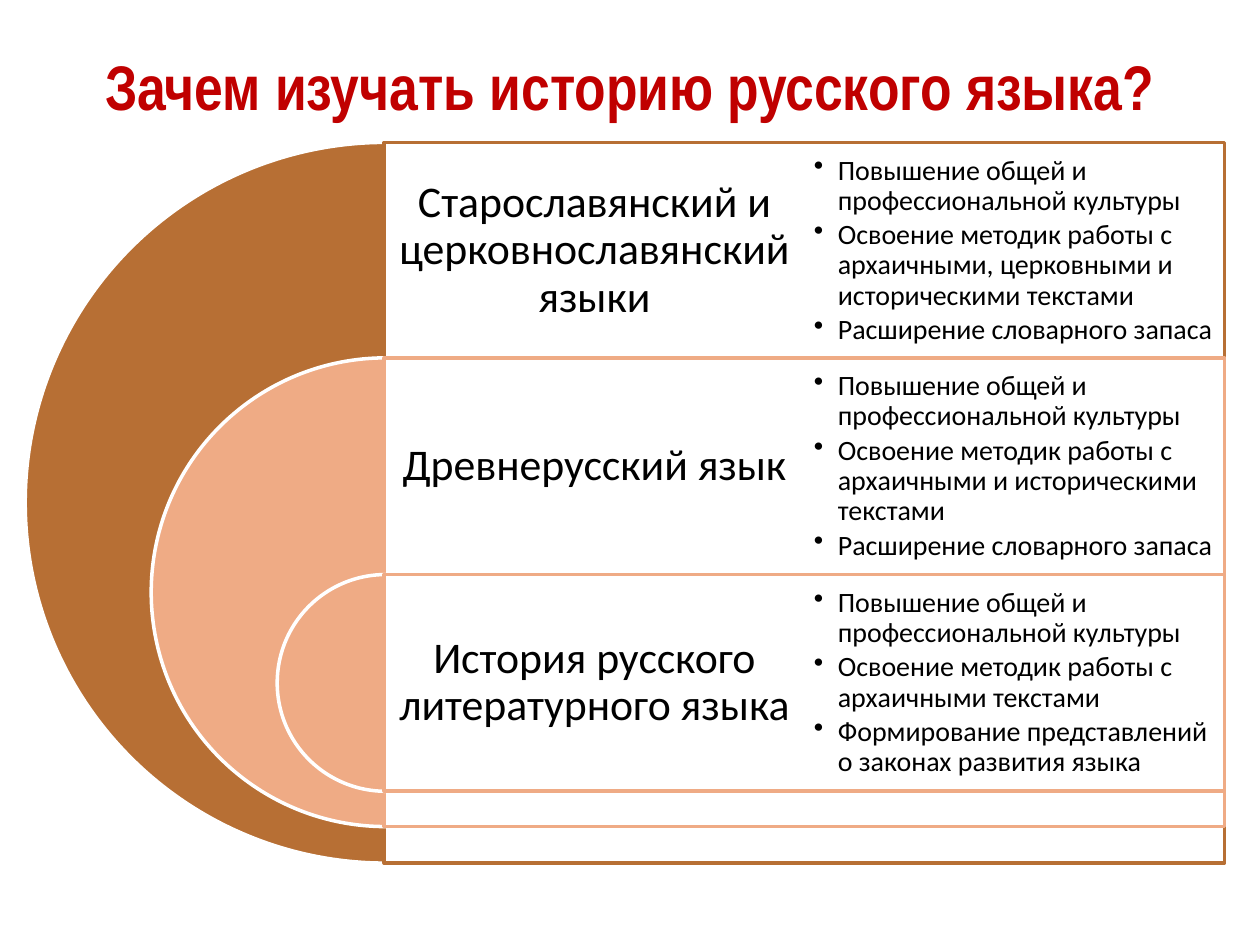
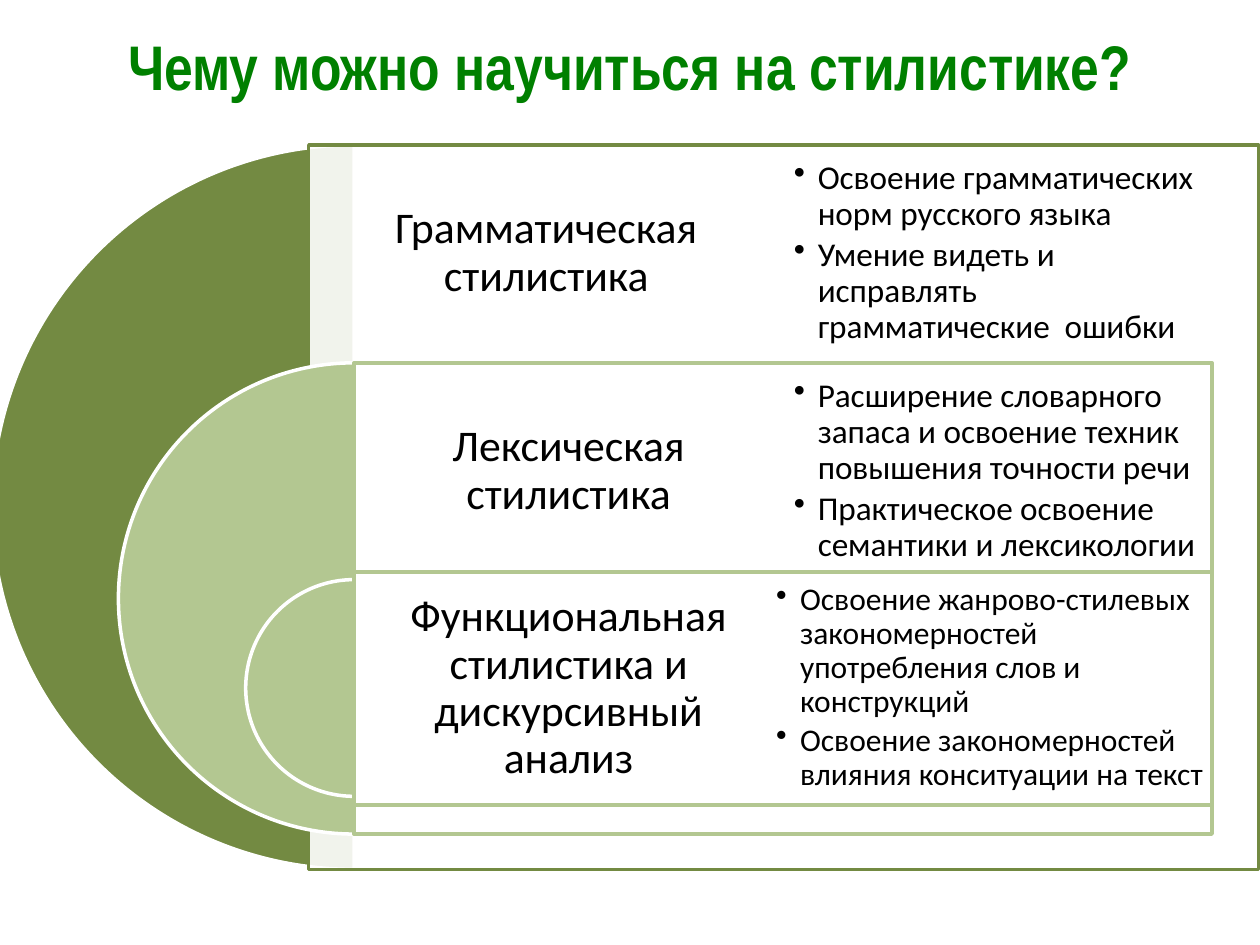
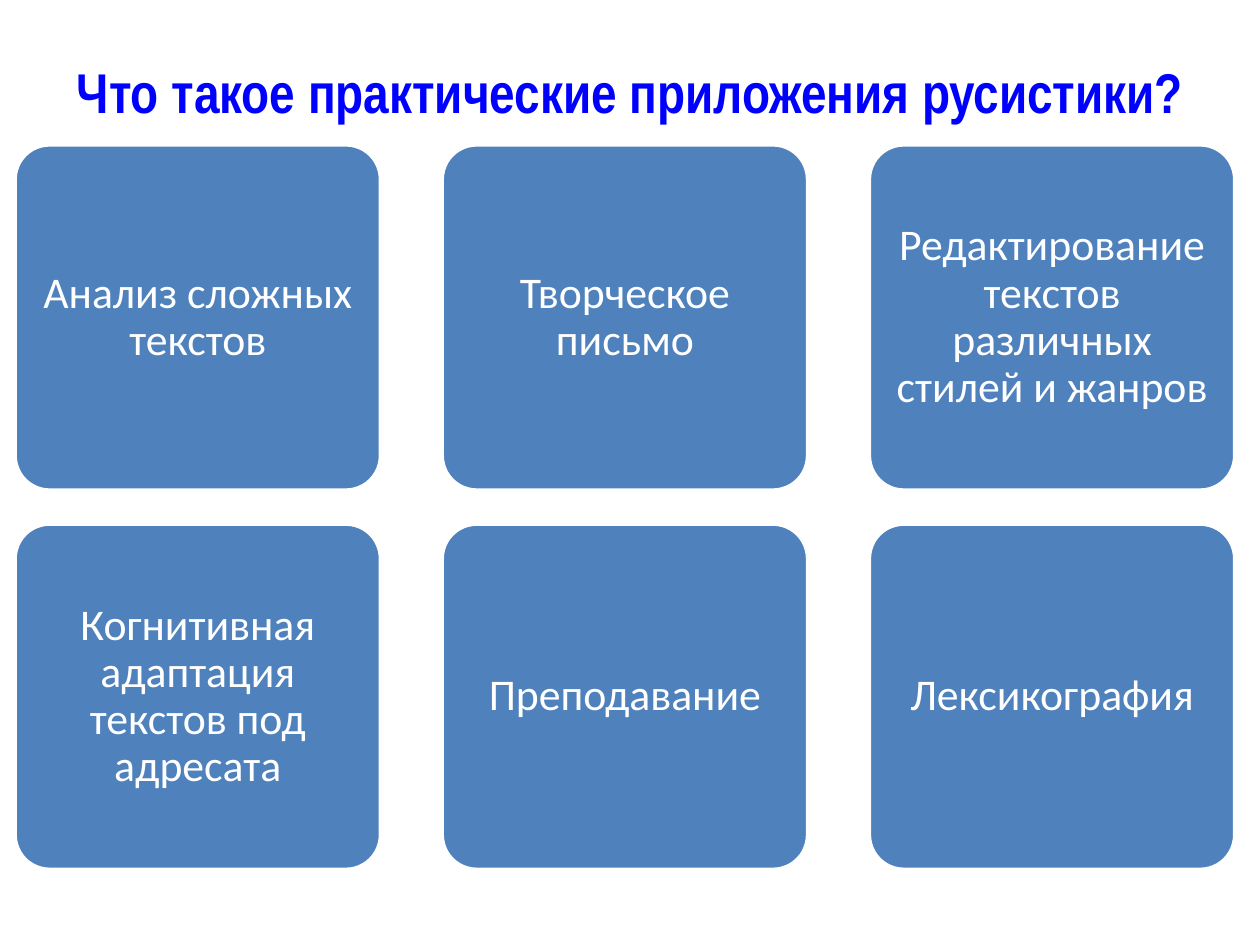
from lxml import etree
from pptx import Presentation
from pptx.dml.color import RGBColor
from pptx.enum.shapes import MSO_SHAPE as Shape
from pptx.enum.text import MSO_ANCHOR as Anchor, MSO_AUTO_SIZE as AutoSize, PP_ALIGN as Align
from pptx.oxml.ns import qn
from pptx.util import Inches, Pt

COLORS = {
    "red": "C00000", "green": "008000", "blue": "0000FF",
    "brown": "B76F34", "peach": "EFAB85",
    "olive": "738A42", "light_olive": "B3C791",
    "tile": "4F81BD", "white": "FFFFFF", "black": "000000",
}
TITLE_FONT, BODY_FONT = "Arial Narrow", "Calibri"
LABEL_SIZE = 25
ROW_HEIGHT = 1.72

# Frames and goal boxes are (left, top, width, height) or (left, width), in inches
CULTURE = "Повышение общей и профессиональной культуры"
VOCABULARY = "Расширение словарного запаса"
HISTORY = {
    "title": "Зачем изучать историю русского языка?",
    "title_box": (0.5, 0.29, 9, 0.77), "title_color": "red",
    "center": 3.06, "tops": (1.13, 2.84, 4.56), "diameters": (5.72, 3.72, 1.72),
    "colors": ("brown", "peach", "peach"), "goal_inset": 0.07,
    "subjects": [
        {"label": "Старославянский и церковнославянский языки",
         "frame": (3.05, 1.13, 6.67, 5.72), "goal_box": (6.39, 3.34), "size": 16,
         "goals": [CULTURE,
                   "Освоение методик работы с архаичными, церковными и историческими текстами",
                   VOCABULARY]},
        {"label": "Древнерусский язык",
         "frame": (3.05, 2.84, 6.67, 3.72), "goal_box": (6.39, 3.34), "size": 16,
         "goals": [CULTURE,
                   "Освоение методик работы с архаичными и историческими текстами",
                   VOCABULARY]},
        {"label": "История русского литературного языка",
         "frame": (3.05, 4.56, 6.67, 1.72), "goal_box": (6.39, 3.34), "size": 16,
         "goals": [CULTURE,
                   "Освоение методик работы с архаичными текстами",
                   "Формирование представлений о законах развития языка"]},
    ],
}
STYLISTICS = {
    "title": "Чему можно научиться на стилистике?",
    "title_box": (0.5, 0.13, 9, 0.77), "title_color": "green",
    "center": 2.81, "tops": (1.15, 2.88, 4.6), "diameters": (5.75, 3.74, 1.72),
    "colors": ("olive", "light_olive", "light_olive"), "goal_inset": 0.08,
    "subjects": [
        {"label": "Грамматическая стилистика",
         "frame": (2.45, 1.15, 7.54, 5.75), "goal_box": (6.22, 3.41), "size": 19,
         "goals": ["Освоение грамматических норм русского языка",
                   "Умение видеть и исправлять грамматические  ошибки"]},
        {"label": "Лексическая стилистика",
         "frame": (2.81, 2.88, 6.81, 3.74), "goal_box": (6.22, 3.41), "size": 19,
         "goals": ["Расширение словарного запаса и освоение техник повышения точности речи",
                   "Практическое освоение семантики и лексикологии"]},
        {"label": "Функциональная стилистика и дискурсивный анализ",
         "frame": (2.81, 4.54, 6.81, 1.85), "goal_box": (6.08, 3.68), "size": 18,
         "goals": ["Освоение жанрово-стилевых закономерностей употребления слов и конструкций",
                   "Освоение закономерностей влияния конситуации на текст"]},
    ],
}
APPLICATIONS = {
    "title": "Что такое практические приложения русистики?",
    "title_box": (0.2, 0.3, 9.61, 0.85), "title_color": "blue", "title_size": 32,
    "tiles": [
        ["Анализ сложных текстов", "Творческое письмо",
         "Редактирование текстов различных стилей и жанров"],
        ["Когнитивная адаптация текстов под адресата", "Преподавание", "Лексикография"],
    ],
}


def rgb(name):
    return RGBColor.from_string(COLORS[name])


def set_font(paragraph, name, size, color, bold=False):
    font = paragraph.font
    font.name, font.size, font.bold = name, Pt(size), bold
    font.color.rgb = rgb(color)


def add_titled_slide(prs, content):
    slide = prs.slides.add_slide(prs.slide_layouts[5])
    title = slide.shapes.title
    title.left, title.top, title.width, title.height = map(Inches, content["title_box"])
    frame = title.text_frame
    frame.text = content["title"]
    frame.auto_size, frame.vertical_anchor = AutoSize.NONE, Anchor.MIDDLE
    heading = frame.paragraphs[0]
    heading.alignment = Align.CENTER
    set_font(heading, TITLE_FONT, content.get("title_size", 36), content["title_color"], True)
    return slide


def add_figure(slide, kind, box, fill, line, adjustments=(), opacity=None):
    figure = slide.shapes.add_shape(kind, *map(Inches, box))
    figure.shadow.inherit = False
    for i, value in enumerate(adjustments):
        figure.adjustments[i] = value
    figure.fill.solid()
    figure.fill.fore_color.rgb = rgb(fill)
    if opacity:
        color = figure.fill._xPr.find(qn("a:solidFill"))[0]
        etree.SubElement(color, qn("a:alpha"), val=str(opacity * 1000))
    figure.line.color.rgb = rgb(line)
    figure.line.width = Pt(2)
    return figure


def prepare_text(shape, inset):
    frame = shape.text_frame
    frame.word_wrap, frame.vertical_anchor = True, Anchor.MIDDLE
    frame.margin_left = frame.margin_right = Inches(inset)
    frame.margin_top = frame.margin_bottom = Inches(inset)
    return frame


def write_label(shape, text, color):
    frame = prepare_text(shape, 0.1)
    frame.text = text
    label = frame.paragraphs[0]
    label.alignment, label.line_spacing = Align.CENTER, 0.9
    set_font(label, BODY_FONT, LABEL_SIZE, color)


def write_goals(shape, goals, size, inset):
    frame = prepare_text(shape, inset)
    for i, text in enumerate(goals):
        goal = frame.paragraphs[0] if i == 0 else frame.add_paragraph()
        goal.text = text
        props = goal._p.get_or_add_pPr()
        props.set("marL", str(Inches(0.19)))
        props.set("indent", str(-Inches(0.19)))
        etree.SubElement(props, qn("a:buChar"), char="•")
        goal.line_spacing, goal.space_after = 0.9, Pt(0.15 * size)
        set_font(goal, BODY_FONT, size, "black")


def build_nested_circles(prs, content):
    slide = add_titled_slide(prs, content)
    subjects = content["subjects"]

    # Half circles, their frames and labels, from the outside in
    for subject, top, diameter, color in zip(
            subjects, content["tops"], content["diameters"], content["colors"]):
        circle = (content["center"] - diameter / 2, top, diameter, diameter)
        add_figure(slide, Shape.PIE, circle, color, "white", (54, 162))
        add_figure(slide, Shape.RECTANGLE, subject["frame"], "white", color, opacity=90)
        left, frame_top, width, height = subject["frame"]
        label_height = height if subject is subjects[-1] else ROW_HEIGHT
        label = slide.shapes.add_textbox(
            *map(Inches, (left, frame_top, width / 2, label_height)))
        write_label(label, subject["label"], "black")

    # Goals on the right
    for subject, top in zip(subjects, content["tops"]):
        left, width = subject["goal_box"]
        goals = slide.shapes.add_textbox(*map(Inches, (left, top, width, ROW_HEIGHT)))
        write_goals(goals, subject["goals"], subject["size"], content["goal_inset"])


def build_tiles(prs, content):
    slide = add_titled_slide(prs, content)
    for row, texts in enumerate(content["tiles"]):
        for column, text in enumerate(texts):
            box = (0.12 + 3.39 * column, 1.15 + 3.01 * row, 2.9, 2.74)
            tile = add_figure(slide, Shape.ROUNDED_RECTANGLE, box, "tile", "white", (0.1,))
            write_label(tile, text, "white")


def main():
    prs = Presentation()
    prs.slide_width, prs.slide_height = Inches(10), Inches(7.5)
    build_nested_circles(prs, HISTORY)
    build_nested_circles(prs, STYLISTICS)
    build_tiles(prs, APPLICATIONS)
    prs.save("out.pptx")


if __name__ == "__main__":
    main()
